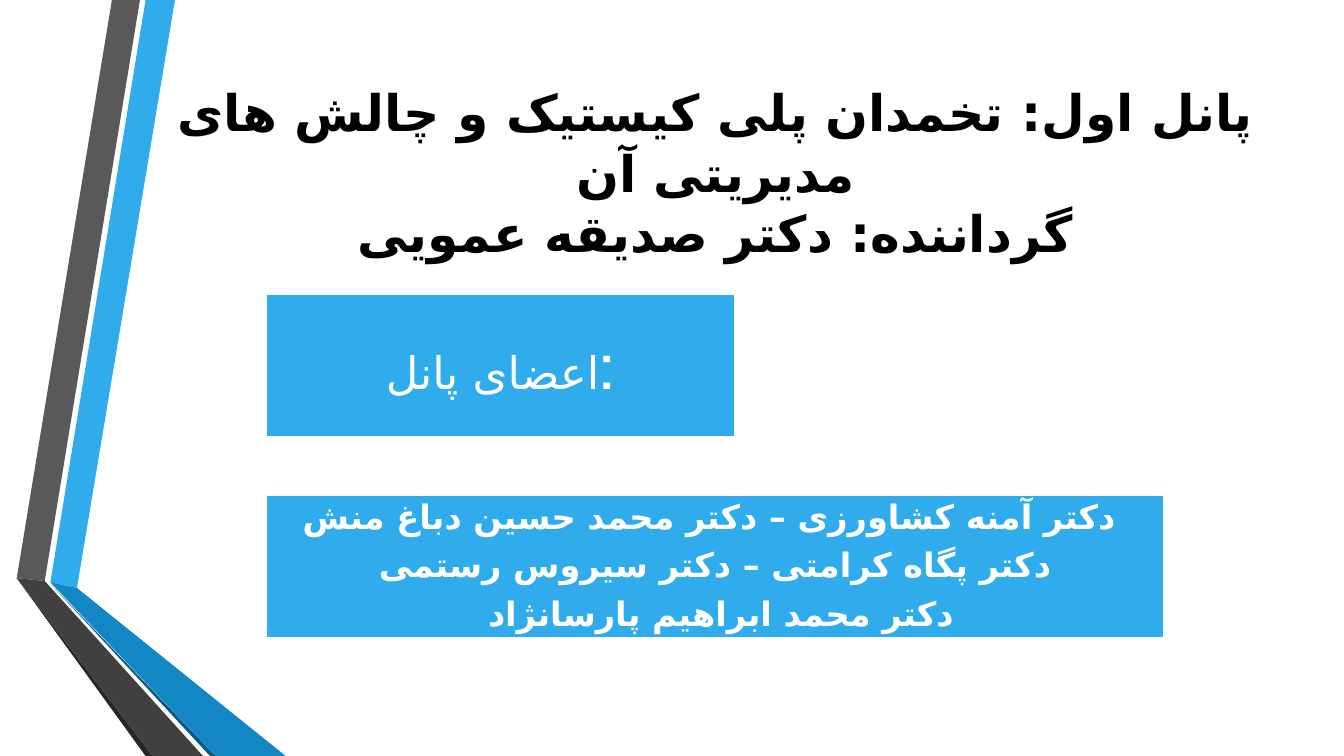
from dataclasses import dataclass

from lxml import etree
from pptx import Presentation
from pptx import util as u
from pptx.dml.color import RGBColor
from pptx.enum import shapes, text
from pptx.oxml import ns


@dataclass(frozen=True)
class Theme:
    font: str = "Cabin"
    persian_font: str = "DejaVu Sans"
    black: str = "000000"
    white: str = "FFFFFF"
    blue: str = "30ACEC"
    blue_fold: str = "1287C3"
    blue_edge: str = "0C5A82"
    gray: str = "595959"
    gray_fold: str = "404040"
    gray_edge: str = "262626"
    title: int = 36
    heading: int = 32
    colon: int = 54
    members: int = 24


theme = Theme()


def format_run(run, size, color, bold=False):
    run.font.size = u.Pt(size)
    run.font.bold = bold
    run.font.name = theme.font
    run.font.color.rgb = RGBColor.from_string(color)
    script_font = etree.SubElement(run.font._element, ns.qn("a:cs"))
    script_font.set("typeface", theme.persian_font)


def format_panel(panel, top, width):
    panel.left, panel.top = u.Pt(190), u.Pt(top)
    panel.width, panel.height = u.Pt(width), u.Pt(102)
    panel.fill.solid()
    panel.fill.fore_color.rgb = RGBColor.from_string(theme.blue)
    panel.line.color.rgb = RGBColor.from_string(theme.white)
    panel.line.width = u.Pt(1.25)
    frame = panel.text_frame
    frame.word_wrap = True
    frame.auto_size = text.MSO_AUTO_SIZE.NONE
    frame.vertical_anchor = text.MSO_ANCHOR.MIDDLE
    frame.margin_left = frame.margin_right = u.Pt(1.6)
    frame.margin_top = frame.margin_bottom = u.Pt(1.6)
    for line in frame.paragraphs:
        line.alignment = text.PP_ALIGN.CENTER
        line.line_spacing = 0.9
        line.space_before = u.Pt(0)
        line.space_after = u.Pt(9)


deck = Presentation()
deck.slide_width, deck.slide_height = u.Pt(960), u.Pt(540)
slide = deck.slides.add_slide(deck.slide_layouts[1])

ribbons = [
    (theme.blue, [(36, 416.2), (55.4, 419.8), (124.6, 0), (104.4, 0)]),
    (theme.gray, [(100, 0), (79.9, 0), (11.5, 412.6), (31.7, 415.4)]),
    (theme.gray_edge, [(11.5, 412.6), (104.4, 540), (108.7, 540)]),
    (theme.blue_edge, [(36, 416.9), (149.8, 540), (154.1, 540)]),
    (theme.blue_fold, [(36, 416.2), (154.1, 540), (203.8, 540), (55.4, 419.8)]),
    (theme.gray_fold, [(11.5, 412.6), (108.7, 540), (145.4, 540), (31.7, 415.4)]),
]
for color, corners in ribbons:
    outline = slide.shapes.build_freeform(*corners[0], scale=u.Pt(1))
    outline.add_line_segments(corners[1:], close=True)
    ribbon = outline.convert_to_shape()
    ribbon.shadow.inherit = False
    ribbon.fill.solid()
    ribbon.fill.fore_color.rgb = RGBColor.from_string(color)
    ribbon.line.fill.background()

title = slide.shapes.title
title.left, title.top = u.Pt(116.6), u.Pt(54)
title.width, title.height = u.Pt(789), u.Pt(138)
title.text_frame.text = (
    "پانل اول: تخمدان پلی کیستیک و چالش های مدیریتی آن\v"
    "گرداننده: دکتر صدیقه عمویی"
)
title.text_frame.word_wrap = True
title.text_frame.auto_size = text.MSO_AUTO_SIZE.NONE
title.text_frame.vertical_anchor = text.MSO_ANCHOR.MIDDLE
title.text_frame.paragraphs[0].alignment = text.PP_ALIGN.CENTER
for run in title.text_frame.paragraphs[0].runs:
    format_run(run, theme.title, theme.black, bold=True)

heading = slide.shapes.add_shape(shapes.MSO_SHAPE.RECTANGLE, 0, 0, 0, 0)
heading.shadow.inherit = False
heading.text_frame.text = "اعضای پانل"
colon = heading.text_frame.paragraphs[0].add_run()
colon.text = ":"
format_panel(heading, 210, 335)
format_run(heading.text_frame.paragraphs[0].runs[0], theme.heading, theme.white)
format_run(colon, theme.colon, theme.white)

members = slide.placeholders[1]
members.text_frame.text = "\n".join([
    "دکتر آمنه کشاورزی – دکتر محمد حسین دباغ منش ",
    " دکتر پگاه کرامتی – دکتر سیروس رستمی ",
    " دکتر محمد ابراهیم پارسانژاد",
])
format_panel(members, 354, 641.5)
for member_line in members.text_frame.paragraphs:
    properties = member_line._p.get_or_add_pPr()
    properties.set("marL", "0")
    properties.set("indent", "0")
    etree.SubElement(properties, ns.qn("a:buNone"))
    format_run(member_line.runs[0], theme.members, theme.white, bold=True)

deck.save("out.pptx")
